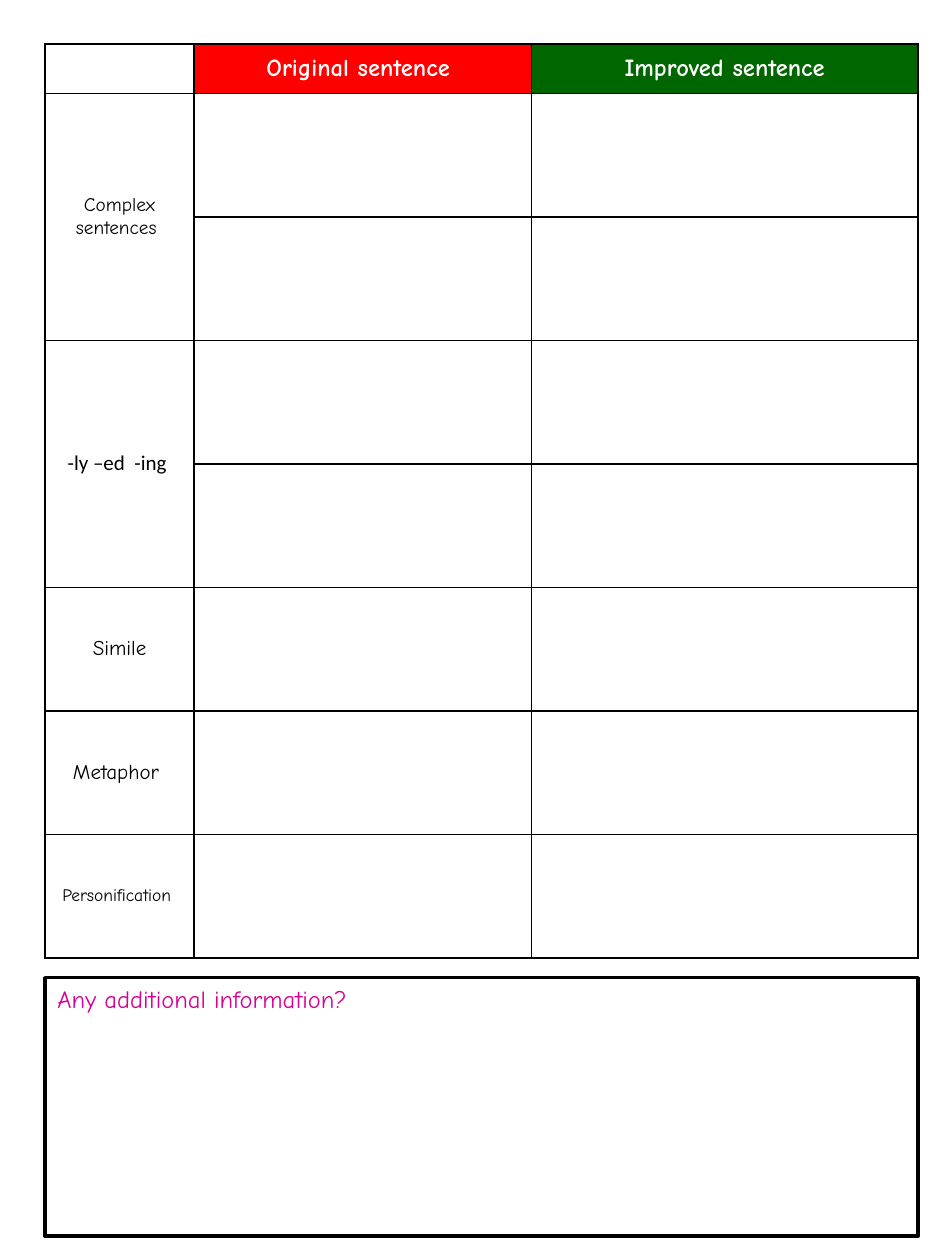
import pptx
import pptx.dml.color
import pptx.enum.shapes
import pptx.enum.text
import pptx.oxml
import pptx.oxml.ns
import pptx.util
from pptx.util import Cm

COLOURS = {
    "black": "000000",
    "white": "FFFFFF",
    "red": "FF0000",
    "green": "006600",
    "pink": "D60093",
}
HEADINGS = [("Original sentence ", "red"), ("Improved sentence", "green")]
TECHNIQUES = [
    ("Complex sentences ", 2, 11, "Comic Neue"),
    ("-ly –ed  -ing ", 2, 12, "Calibri"),
    ("Simile", 1, 12, "Comic Neue"),
    ("Metaphor ", 1, 12, "Comic Neue"),
    ("Personification ", 1, 10, "Comic Neue"),
]
COLUMN_WIDTHS = [3, 6.8, 7.8]
HEADING_HEIGHT, ROW_HEIGHT = 0.99, 2.49
LEFT, WIDTH = 0.91, sum(COLUMN_WIDTHS)


def colour(name):
    return pptx.dml.color.RGBColor.from_string(COLOURS[name])


def apply_format(target, values):
    for name, value in values.items():
        setattr(target, name, value)


def fill_with(target, name):
    target.fill.solid()
    target.fill.fore_color.rgb = colour(name)


def write_text(frame, text, size, tone, font="Comic Neue", bold=False, align="LEFT"):
    paragraph = frame.paragraphs[0]
    paragraph.alignment = getattr(pptx.enum.text.PP_ALIGN, align)
    span = paragraph.add_run()
    span.text = text
    apply_format(span.font, {"name": font, "size": pptx.util.Pt(size), "bold": bold})
    span.font.color.rgb = colour(tone)


def add_borders(cell):
    properties = cell._tc.get_or_add_tcPr()
    for side in ("lnL", "lnR", "lnT", "lnB"):
        properties.append(pptx.oxml.parse_xml(
            f'<a:{side} {pptx.oxml.ns.nsdecls("a")} w="{pptx.util.Pt(1)}">'
            f'<a:solidFill><a:srgbClr val="{COLOURS["black"]}"/></a:solidFill>'
            f'</a:{side}>'
        ))


def style_cell(cell):
    add_borders(cell)
    fill_with(cell, "white")
    apply_format(cell, {
        "margin_top": 0,
        "margin_bottom": 0,
        "vertical_anchor": pptx.enum.text.MSO_ANCHOR.MIDDLE,
    })


def add_sentence_table(page):
    heights = [HEADING_HEIGHT] + [ROW_HEIGHT] * sum(rows for _, rows, _, _ in TECHNIQUES)
    table = page.shapes.add_table(
        len(heights), len(COLUMN_WIDTHS), Cm(LEFT), Cm(0.89), Cm(WIDTH), Cm(sum(heights))
    ).table
    apply_format(table, {"first_row": False, "horz_banding": False})
    for column, width in zip(table.columns, COLUMN_WIDTHS):
        column.width = Cm(width)
    for row, height in zip(table.rows, heights):
        row.height = Cm(height)
    for cell in table.iter_cells():
        style_cell(cell)

    for column, (text, tone) in enumerate(HEADINGS, 1):
        cell = table.cell(0, column)
        fill_with(cell, tone)
        write_text(cell.text_frame, text, 14, "white", bold=True, align="CENTER")

    top = 1
    for text, rows, size, font in TECHNIQUES:
        cell = table.cell(top, 0)
        if rows > 1:
            cell.merge(table.cell(top + rows - 1, 0))
        write_text(cell.text_frame, text, size, "black", font, align="CENTER")
        top += rows


def add_information_box(page):
    box = page.shapes.add_shape(
        pptx.enum.shapes.MSO_SHAPE.RECTANGLE, Cm(LEFT), Cm(19.71), Cm(WIDTH), Cm(5.21)
    )
    box.shadow.inherit = False
    fill_with(box, "white")
    box.line.color.rgb = colour("black")
    box.line.width = pptx.util.Pt(2)
    apply_format(box.text_frame, {
        "word_wrap": True,
        "vertical_anchor": pptx.enum.text.MSO_ANCHOR.TOP,
    })
    write_text(box.text_frame, "Any additional information?", 14, "pink")


def main():
    deck = pptx.Presentation()
    apply_format(deck, {"slide_width": Cm(19.05), "slide_height": Cm(25.4)})
    page = deck.slides.add_slide(deck.slide_layouts[6])
    add_sentence_table(page)
    add_information_box(page)
    deck.save("out.pptx")


if __name__ == "__main__":
    main()
